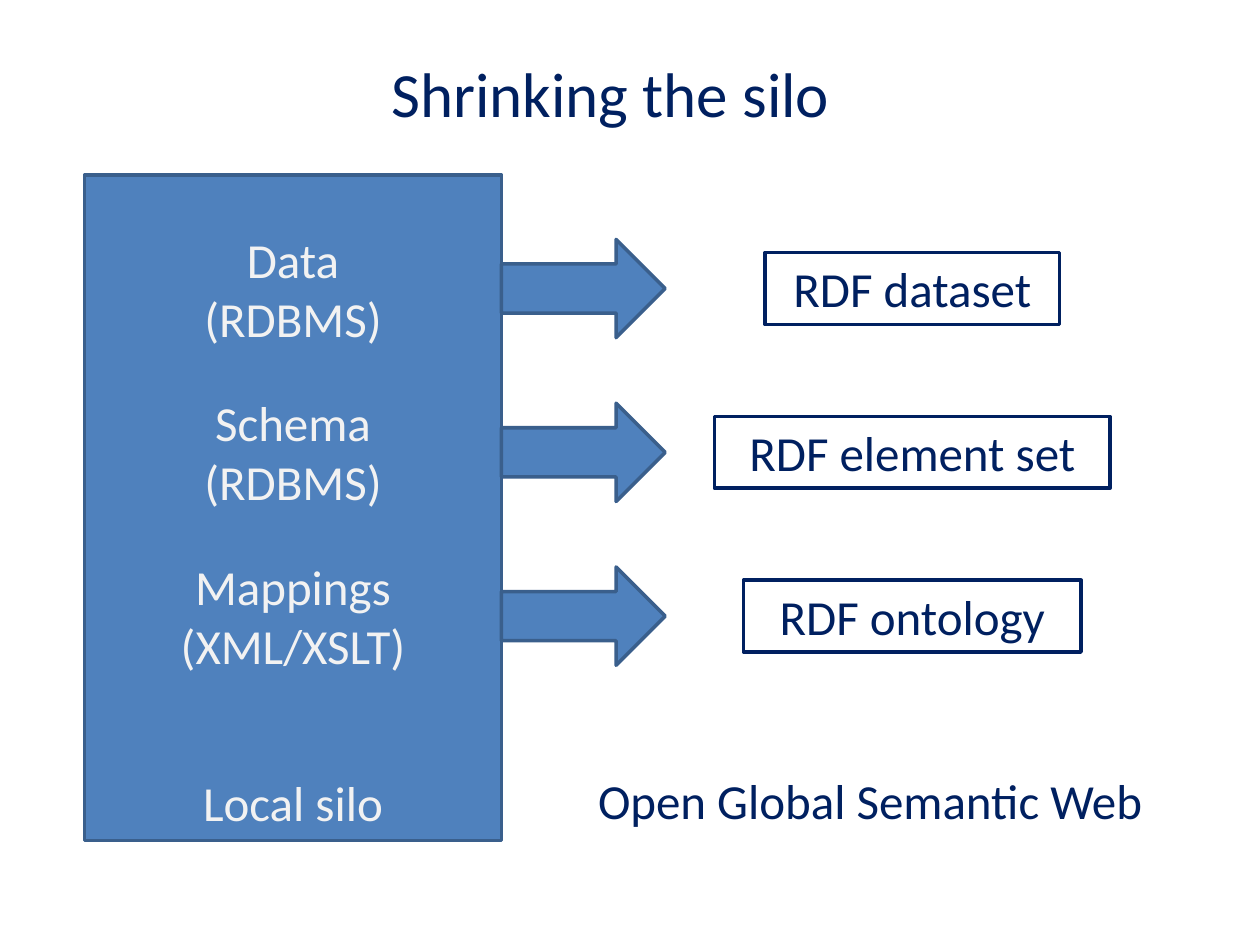
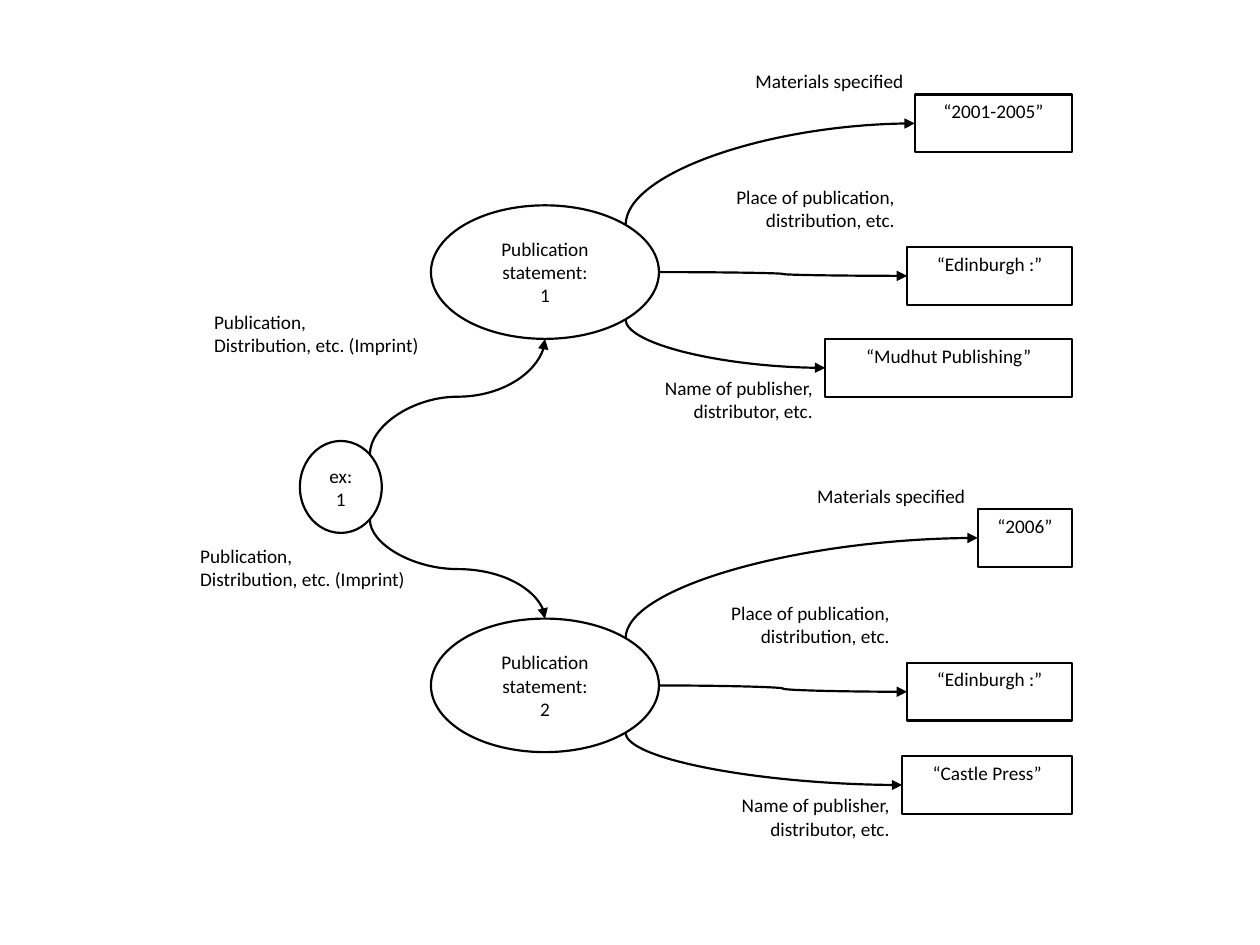
"""Build two slides: shrinking the local silo, and publication statements as a graph."""
from dataclasses import dataclass
from math import sqrt

from lxml import etree
from pptx import Presentation
from pptx.dml.color import RGBColor
from pptx.enum.shapes import MSO_CONNECTOR, MSO_SHAPE
from pptx.enum.text import MSO_ANCHOR, PP_ALIGN
from pptx.oxml.ns import qn
from pptx.util import Inches, Pt

RECT, OVAL, ARROW = MSO_SHAPE.RECTANGLE, MSO_SHAPE.OVAL, MSO_SHAPE.RIGHT_ARROW
CURVE = MSO_CONNECTOR.CURVE
LEFT, CENTER, RIGHT = PP_ALIGN.LEFT, PP_ALIGN.CENTER, PP_ALIGN.RIGHT
TOP, MIDDLE = MSO_ANCHOR.TOP, MSO_ANCHOR.MIDDLE


@dataclass(frozen=True)
class Theme:
    """Colours, type sizes and line widths shared by the slides."""
    font: str = "Calibri"
    navy: str = "002060"
    blue: str = "4F81BD"
    edge: str = "3A5F8C"
    pale: str = "F2F2F2"
    black: str = "000000"
    white: str = "FFFFFF"
    title: int = 36
    body: int = 28
    small: int = 11
    thick: float = 2
    thin: float = 1.25


THEME = Theme()
SLIDE_SIZE = (Inches(10), Inches(7.5))
CELL = SLIDE_SIZE[0] / 100

SILO_TITLE = "Shrinking the silo"
SILO_ROWS = [
    (["Data", "(RDBMS)"], "RDF dataset", 23.4),
    (["Schema", "(RDBMS)"], "RDF element set", 31.4),
    (["Mappings", "(XML/XSLT)"], "RDF ontology", 26.8),
]
SILO_NAME, WEB_NAME = "Local silo", "Open Global Semantic Web"
SILO_BOX = (6.7, 13.9, 33.1, 52.8)
FIRST_ROW, ROW_PITCH = 22.9, 13
WEB_AXIS = 72.4

RECORD = ["ex:", "1"]
IMPRINT = ["Publication,", "Distribution, etc. (Imprint)"]
PROPERTIES = [
    (["Materials specified"], 19.4, 4.8, -4.8),
    (["Place of publication,", "distribution, etc."], 20.5, 7.6, -7.7),
    (["Name of publisher,", "distributor, etc."], 19.5, 7.6, 0.2),
]
STATEMENTS = [
    {"number": "1", "axis": 21.6, "imprint_at": (16, 24.1), "values": [
        ("“2001-2005”", 12.5, 9.8, 72.7),
        ("“Edinburgh :”", 13.1, 21.9, 72),
        ("“Mudhut Publishing”", 19.6, 29.2, 65.5)]},
    {"number": "2", "axis": 54.4, "imprint_at": (14.9, 42.7), "values": [
        ("“2006”", 7.5, 42.7, 77.6),
        ("“Edinburgh :”", 13.1, 54.9, 71.6),
        ("“Castle Press”", 13.5, 62.3, 71.6)]},
]
RECORD_CENTER, RECORD_SIZE = (27.05, 38.65), (6.5, 7.3)
STATEMENT_X, STATEMENT_SIZE = 43.25, (18.1, 10.6)
VALUE_RIGHT, VALUE_HEIGHT = 85.1, 4.6


def cells(*lengths):
    return [round(length * CELL) for length in lengths]


def centered(x, y, width, height):
    return x - width / 2, y - height / 2, width, height


def rgb(color):
    return RGBColor.from_string(color)


def write(shape, lines, size, color, align=CENTER, anchor=TOP, inset=None):
    frame = shape.text_frame
    layout = {"word_wrap": True, "vertical_anchor": anchor}
    if inset is not None:
        layout.update({f"margin_{side}": Inches(inset)
                       for side in ("left", "top", "right", "bottom")})
    for name, value in layout.items():
        setattr(frame, name, value)
    for index, line in enumerate(lines):
        paragraph = frame.add_paragraph() if index else frame.paragraphs[0]
        paragraph.text, paragraph.alignment = line, align
        for name, value in {"name": THEME.font, "size": Pt(size)}.items():
            setattr(paragraph.font, name, value)
        paragraph.font.color.rgb = rgb(color)


def label(slide, box, lines, size, color, align=CENTER):
    write(slide.shapes.add_textbox(*cells(*box)), lines, size, color, align)


def outline(slide, kind, box, edge, width, fill=None):
    shape = slide.shapes.add_shape(kind, *cells(*box))
    shape.shadow.inherit = False
    if fill:
        shape.fill.solid()
        shape.fill.fore_color.rgb = rgb(fill)
    else:
        shape.fill.background()
    shape.line.color.rgb, shape.line.width = rgb(edge), Pt(width)
    return shape


def curve(slide, start, end, bends, upright):
    """Draw a curved arrow; an upright one leaves its start vertically."""
    (x1, y1), (x2, y2) = start, end
    width, height = abs(x2 - x1), abs(y2 - y1)
    if upright:
        width, height = height, width
    left, top, *_ = centered((x1 + x2) / 2, (y1 + y2) / 2, width, height)
    link = slide.shapes.add_connector(CURVE, *cells(left, top, left + width, top + height))
    link.line.color.rgb, link.line.width = rgb(THEME.black), Pt(THEME.thin)
    properties = link._element.spPr
    properties.find(qn("a:prstGeom")).set("prst", f"curvedConnector{bends}")
    if upright:
        rising = y2 < y1
        turn = {"rot": str((90 if rising else 270) * 60000), "flipH": "1",
                "flipV": "1" if rising else "0"}
        for name, value in turn.items():
            properties.find(qn("a:xfrm")).set(name, value)
    etree.SubElement(properties.find(qn("a:ln")), qn("a:tailEnd"), type="triangle")
    etree.SubElement(properties, qn("a:effectLst"))


def rim(center, size, side):
    """Return the point on the right of an ellipse at 45 degrees, above or below."""
    return center[0] + size[0] / sqrt(8), center[1] + side * size[1] / sqrt(8)


def build_silo(slide):
    label(slide, (26.4, 3.8, 44.1, 7.1), [SILO_TITLE], THEME.title, THEME.navy)
    left, _, width, _ = SILO_BOX
    silo_axis = left + width / 2
    outline(slide, RECT, SILO_BOX, THEME.edge, THEME.thick, THEME.blue)
    for index, (source, target, target_width) in enumerate(SILO_ROWS):
        y = FIRST_ROW + index * ROW_PITCH
        label(slide, centered(silo_axis, y, 21.2, 10.4), source, THEME.body, THEME.pale)
        outline(slide, ARROW, (left + width, y - 3.9, 13, 7.8),
                THEME.edge, THEME.thick, THEME.blue)
        target_box = outline(slide, RECT, centered(WEB_AXIS, y, target_width, 5.7),
                             THEME.navy, THEME.thick)
        write(target_box, [target], THEME.body, THEME.navy)
    label(slide, (14.4, 60.8, 17.7, 5.7), [SILO_NAME], THEME.body, THEME.pale)
    label(slide, (46.3, 60.7, 45.5, 5.7), [WEB_NAME], THEME.body, THEME.navy)


def node(slide, center, size, lines):
    ellipse = outline(slide, OVAL, centered(*center, *size),
                      THEME.black, THEME.thin, THEME.white)
    write(ellipse, lines, THEME.small, THEME.black, anchor=MIDDLE, inset=0)


def build_graph(slide):
    node(slide, RECORD_CENTER, RECORD_SIZE, RECORD)
    for statement, side in zip(STATEMENTS, (-1, 1)):
        center = STATEMENT_X, statement["axis"]
        half_width, half_height = (length / 2 for length in STATEMENT_SIZE)
        node(slide, center, STATEMENT_SIZE,
             ["Publication", "statement:", statement["number"]])
        curve(slide, rim(RECORD_CENTER, RECORD_SIZE, side),
              (center[0], center[1] - side * half_height), 3, True)
        label(slide, (*statement["imprint_at"], 26.2, 10.4), IMPRINT,
              THEME.small, THEME.black, LEFT)
        starts = (rim(center, STATEMENT_SIZE, -1), (center[0] + half_width, center[1]),
                  rim(center, STATEMENT_SIZE, 1))
        for row, (text, width, y, label_right) in enumerate(statement["values"]):
            value_left = VALUE_RIGHT - width
            value_box = outline(slide, RECT,
                                (value_left, y - VALUE_HEIGHT / 2, width, VALUE_HEIGHT),
                                THEME.black, THEME.thin)
            write(value_box, [text], THEME.small, THEME.black, inset=0.04)
            level = row == 1
            curve(slide, starts[row], (value_left, y), 3 if level else 2, not level)
            caption, caption_width, caption_height, rise = PROPERTIES[row]
            label(slide, (label_right - caption_width, y + rise, caption_width, caption_height),
                  caption, THEME.small, THEME.black, RIGHT)


def main():
    deck = Presentation()
    deck.slide_width, deck.slide_height = SLIDE_SIZE
    for build in (build_silo, build_graph):
        build(deck.slides.add_slide(deck.slide_layouts[6]))
    deck.save("out.pptx")


if __name__ == "__main__":
    main()
